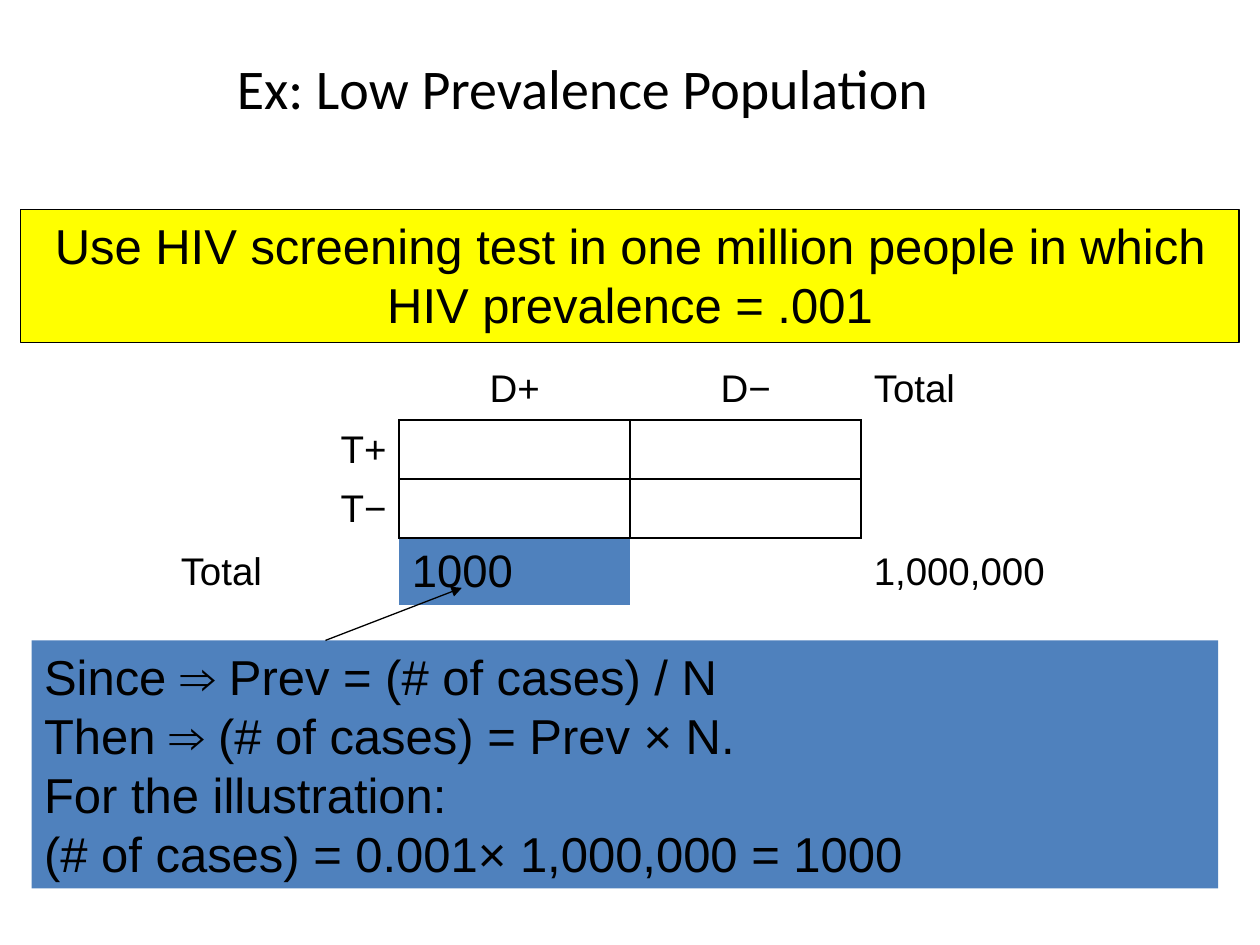
from dataclasses import dataclass

from lxml import etree
from pptx import Presentation
from pptx import util as u
from pptx.dml.color import RGBColor
from pptx.enum import shapes, text
from pptx.oxml.ns import qn

Cm, Pt = u.Cm, u.Pt
LEFT, MID, RIGHT = text.PP_ALIGN.LEFT, text.PP_ALIGN.CENTER, text.PP_ALIGN.RIGHT


@dataclass(frozen=True)
class Theme:
    ink: str = "000000"
    note: str = "FFFF00"
    blue: str = "4F81BD"
    head: str = "Calibri"
    body: str = "Arial"
    title: int = 32
    large: int = 28
    count: int = 26
    cell: int = 22


T = Theme()
ROWS = [
    ["", "D+", "D−", "Total"],
    ["T+", "", "", ""],
    ["T−", "", "", ""],
    ["Total", "1000", "", "1,000,000"],
]
HEIGHTS = [1.27, 1.19, 1.19, 1.35]
SIDES = {"L": (0, -1), "R": (0, 1), "T": (-1, 0), "B": (1, 0)}


def rgb(code):
    return RGBColor.from_string(code)


def write(frame, words, size=T.large, font=T.body, align=LEFT):
    """Fill a text frame with one paragraph, breaking it at line ends."""
    para = frame.paragraphs[0]
    para.alignment = align
    for i, line in enumerate(words.splitlines()):
        if i:
            para.add_line_break()
        run = para.add_run()
        run.text = line
        run.font.size, run.font.name = Pt(size), font
        run.font.color.rgb = rgb(T.ink)


def heading(slide, box, words):
    frame = slide.shapes.add_textbox(*map(Cm, box)).text_frame
    frame.word_wrap = True
    frame.vertical_anchor = text.MSO_ANCHOR.MIDDLE
    write(frame, words, size=T.title, font=T.head, align=MID)


def panel(slide, box, words, fill, edge=False, align=LEFT):
    shape = slide.shapes.add_shape(shapes.MSO_SHAPE.RECTANGLE, *map(Cm, box))
    shape.shadow.inherit = False
    shape.fill.solid()
    shape.fill.fore_color.rgb = rgb(fill)
    if edge:
        shape.line.color.rgb = rgb(T.ink)
        shape.line.width = Pt(0.75)
    else:
        shape.line.fill.background()
    frame = shape.text_frame
    frame.word_wrap = True
    frame.vertical_anchor = text.MSO_ANCHOR.TOP
    write(frame, words, align=align)


def core(row, col):
    """Tell whether a cell is one of the four test counts."""
    return row in (1, 2) and col in (1, 2)


def border(cell, side, drawn):
    line = etree.SubElement(cell._tc.get_or_add_tcPr(), qn(f"a:ln{side}"))
    line.set("w", str(Pt(1)))
    if drawn:
        fill = etree.SubElement(line, qn("a:solidFill"))
        etree.SubElement(fill, qn("a:srgbClr")).set("val", T.ink)
    else:
        etree.SubElement(line, qn("a:noFill"))


def counts(slide, box):
    """Place the two-by-two table with its row and column totals."""
    table = slide.shapes.add_table(len(ROWS), len(ROWS[0]), *map(Cm, box)).table
    table.first_row = table.horz_banding = False
    for col in table.columns:
        col.width = Cm(box[2] / len(ROWS[0]))
    for r, row in enumerate(ROWS):
        table.rows[r].height = Cm(HEIGHTS[r])
        for c, words in enumerate(row):
            cell = table.cell(r, c)
            cell.vertical_anchor = text.MSO_ANCHOR.MIDDLE
            for side, (down, across) in SIDES.items():
                border(cell, side, core(r, c) or core(r + down, c + across))
            cases = (r, c) == (3, 1)
            if cases:
                cell.fill.solid()
                cell.fill.fore_color.rgb = rgb(T.blue)
            else:
                cell.fill.background()
            align = MID if r == 0 and c < 3 else RIGHT if r in (1, 2) else LEFT
            write(cell.text_frame, words, size=T.count if cases else T.cell, align=align)


def arrow(slide, start, end):
    line = slide.shapes.add_connector(
        shapes.MSO_CONNECTOR.STRAIGHT, *map(Cm, start + end))
    line.line.color.rgb = rgb(T.ink)
    line.line.width = Pt(0.75)
    etree.SubElement(line.line._get_or_add_ln(), qn("a:tailEnd")).set("type", "triangle")
    etree.SubElement(line._element.spPr, qn("a:effectLst"))


def main():
    deck = Presentation()
    deck.slide_width, deck.slide_height = Cm(25.4), Cm(19.05)
    slide = deck.slides.add_slide(deck.slide_layouts[6])
    heading(slide, (1.27, 0.33, 20.96, 2.84), "Ex: Low Prevalence Population")
    counts(slide, (3.39, 7.2, 18.63, 5))
    panel(slide, (0.42, 4.23, 24.56, 2.67),
          "Use HIV screening test in one million people in which HIV prevalence = .001",
          T.note, edge=True, align=MID)
    panel(slide, (0.64, 12.91, 23.92, 5),
          "Since ⇒ Prev = (# of cases) / N\n"
          "Then ⇒ (# of cases) = Prev × N.\n"
          "For the illustration:\n"
          "(# of cases) = 0.001× 1,000,000 = 1000",
          T.blue)
    arrow(slide, (6.56, 12.91), (9.31, 11.85))
    deck.save("out.pptx")


if __name__ == "__main__":
    main()
